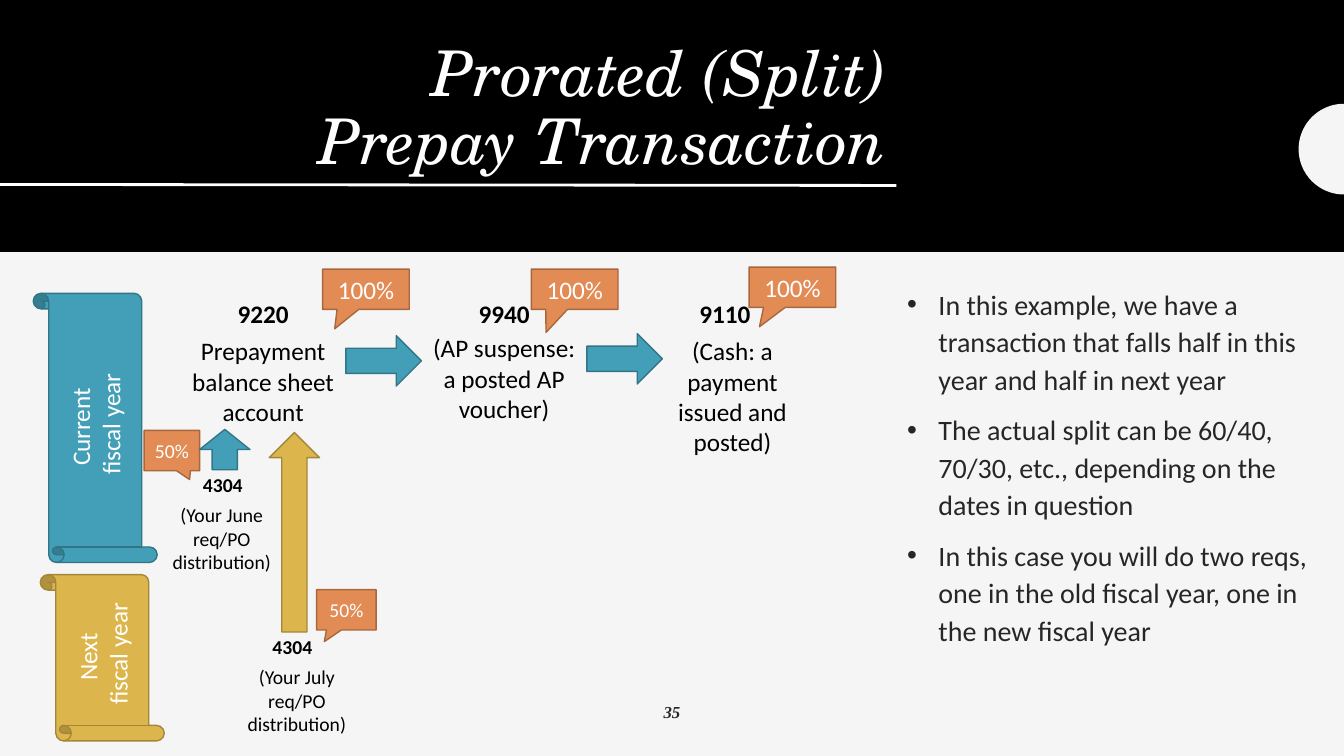
from dataclasses import dataclass
from math import cos, pi, sin

from lxml.etree import SubElement
from pptx import Presentation
from pptx.dml.color import RGBColor
from pptx.enum.shapes import MSO_CONNECTOR, MSO_SHAPE as SHAPE
from pptx.enum.text import MSO_ANCHOR as ANCHOR, MSO_AUTO_SIZE as AUTO, PP_ALIGN as ALIGN
from pptx.oxml.ns import qn
from pptx.util import Inches, Pt


@dataclass(frozen=True)
class Theme:
    paper: str = "F5F5F5"
    band: str = "000000"
    white: str = "FFFFFF"
    black: str = "000000"
    ink: str = "262626"
    # Fill and outline pairs
    teal: tuple = ("439EB7", "327587")
    gold: tuple = ("DCB64D", "A38739")
    orange: tuple = ("E28B55", "A7673F")
    title_font: str = "TeX Gyre Schola"
    body_font: str = "Calibri"
    number_font: str = "Times New Roman"
    title: int = 45
    body: int = 20
    label: int = 18
    small: int = 14
    number: int = 12


def rgb(value):
    return RGBColor.from_string(value)


def set_all(target, formats):
    for name, value in formats.items():
        setattr(target, name, value)


class SlideBuilder:
    def __init__(self, slide, theme):
        self.s, self.theme = slide, theme
        fill = slide.background.fill
        fill.solid()
        fill.fore_color.rgb = rgb(theme.paper)

    def fill_text(self, tf, lines, size, color, font=None, para=None, **style):
        """Put one paragraph per line; a vertical tab inside a line breaks it."""
        tf.word_wrap = True
        for i, line in enumerate(lines):
            p = tf.paragraphs[0] if i == 0 else tf.add_paragraph()
            p.text = line
            set_all(p, {"alignment": ALIGN.CENTER, **(para or {})})
            for r in p.runs:
                set_all(r.font, {"name": font or self.theme.body_font, "size": Pt(size), **style})
                r.font.color.rgb = rgb(color)

    def text(self, box, lines, size, color=None, frame=None, **style):
        sp = self.s.shapes.add_textbox(*map(Inches, box))
        self.fill_text(sp.text_frame, lines, size, color or self.theme.black, **style)
        set_all(sp.text_frame, frame or {})
        return sp

    def label(self, box, lines, size, **style):
        self.text(box, lines, size, frame={"auto_size": AUTO.SHAPE_TO_FIT_TEXT}, **style)

    def bullets(self, box, lines):
        t = self.theme
        para = {"alignment": ALIGN.LEFT, "line_spacing": 1.12, "space_before": Pt(9)}
        sp = self.text(box, lines, t.body, t.ink, para=para)
        for p in sp.text_frame.paragraphs:
            pPr = p._p.get_or_add_pPr()
            pPr.set("marL", str(Inches(0.31)))
            pPr.set("indent", str(-Inches(0.31)))
            SubElement(pPr, qn("a:buFont")).set("typeface", "Arial")
            SubElement(pPr, qn("a:buChar")).set("char", "•")

    def paint(self, sp, fill, line=None):
        sp.shadow.inherit = False
        sp.fill.solid()
        sp.fill.fore_color.rgb = rgb(fill)
        if line:
            sp.line.color.rgb = rgb(line)
            sp.line.width = Pt(1)
        else:
            sp.line.fill.background()

    def shape(self, kind, box, colors, rotation=0, lines=(), size=None, adjust=()):
        sp = self.s.shapes.add_shape(kind, *map(Inches, box))
        sp.rotation = rotation
        self.paint(sp, *colors)
        for i, value in enumerate(adjust):
            sp.adjustments[i] = value
        sp.text_frame.vertical_anchor = ANCHOR.MIDDLE
        if lines:
            self.fill_text(sp.text_frame, lines, size, self.theme.white)

    def callout(self, box, share, size, tip):
        self.shape(SHAPE.RECTANGULAR_CALLOUT, box, self.theme.orange,
                   lines=[share], size=size, adjust=tip)

    def half_disc(self, cx, cy, radius, color):
        """Draw the left half of a disc centred on the slide's right edge."""
        steps = 48
        angles = [pi / 2 + pi * i / steps for i in range(steps + 1)]
        points = [(Inches(cx + radius * cos(a)), Inches(cy - radius * sin(a))) for a in angles]
        builder = self.s.shapes.build_freeform(*points[0])
        builder.add_line_segments(points[1:], close=True)
        self.paint(builder.convert_to_shape(), color)

    def rule(self, start, end, color):
        c = self.s.shapes.add_connector(MSO_CONNECTOR.STRAIGHT, *map(Inches, start + end))
        c.line.color.rgb = rgb(color)
        c.line.width = Pt(2)
        SubElement(c._element.spPr, qn("a:effectLst"))


def main():
    prs = Presentation()
    prs.slide_width, prs.slide_height = Inches(13.33), Inches(7.5)
    t = Theme()
    b = SlideBuilder(prs.slides.add_slide(prs.slide_layouts[6]), t)

    # Header
    b.shape(SHAPE.RECTANGLE, (0, 0, 13.33, 2.5), (t.band,))
    b.text((1.05, 0.47, 7.84, 1.35), ["Prorated (Split)\vPrepay Transaction"], t.title, t.white,
           frame={"vertical_anchor": ANCHOR.BOTTOM}, font=t.title_font, italic=True,
           para={"alignment": ALIGN.RIGHT, "line_spacing": 0.9})
    b.rule((0, 1.83), (8.89, 1.84), t.white)
    b.half_disc(13.33, 1.48, 0.45, t.paper)

    b.bullets((8.9, 2.76, 4.37, 3.87), [
        "In this example, we have a transaction that falls half in this year and half in next year",
        "The actual split can be 60/40, 70/30, etc., depending on the dates in question",
        "In this case you will do two reqs, one in the old fiscal year, one in the new fiscal year",
    ])

    # Fiscal year scrolls
    for box, colors, year in (
        ((-0.39, 3.63, 2.67, 1.23), t.teal, "Current "),
        ((0.19, 5.91, 1.65, 1.23), t.gold, "Next "),
    ):
        b.shape(SHAPE.HORIZONTAL_SCROLL, box, colors, 270, [year, "fiscal year"], t.label)

    # Accounts along the payment flow
    for code, code_x, code_w, note, note_box, callout_at, tip in (
        ("9220", 1.79, 1.64, "Prepayment balance sheet account",
         (1.79, 3.28, 1.64, 1.01), (3.2, 2.67), (-0.36, 0.98)),
        ("9940", 4.18, 1.64, "(AP suspense: a posted AP voucher)",
         (4.18, 3.25, 1.64, 1.01), (5.27, 2.67), (-0.33, 1.07)),
        ("9110", 6.44, 1.5, "(Cash: a payment issued and posted)",
         (6.58, 3.28, 1.37, 1.31), (7.43, 2.65), (-0.38, 0.98)),
    ):
        b.label(note_box, [note], t.label)
        b.label((code_x, 2.91, code_w, 0.4), [code], t.label, bold=True)
        b.callout((*callout_at, 0.86, 0.4), "100%", t.label, tip)

    # Requisitions feeding the prepayment account
    for code_at, note_box, note, callout_box, tip in (
        ((1.39, 4.64), (1.38, 4.94, 1.64, 0.81), ["(Your June", "req/PO distribution)"],
         (1.43, 4.27, 0.55, 0.4), (0.32, 0.72)),
        ((2.08, 6.25), (2.23, 6.55, 1.43, 0.81), ["(Your July req/PO distribution)"],
         (3.14, 5.85, 0.59, 0.4), (-0.37, 0.79)),
    ):
        b.label(note_box, note, t.small)
        b.label((*code_at, 1.64, 0.34), ["4304"], t.small, bold=True)
        b.callout(callout_box, "50%", t.small, tip)

    for x, y, length, colors, rotation in (
        (3.43, 3.33, 0.75, t.teal, 0),
        (5.82, 3.31, 0.75, t.teal, 0),
        (2.03, 4.21, 0.4, t.teal, 270),
        (1.93, 5.03, 1.98, t.gold, 270),
    ):
        b.shape(SHAPE.RIGHT_ARROW, (x, y, length, 0.5), colors, rotation)

    b.text((0, 6.91, 13.33, 0.4), ["35"], t.number, t.ink,
           font=t.number_font, bold=True, italic=True)
    prs.save("out.pptx")


if __name__ == "__main__":
    main()
